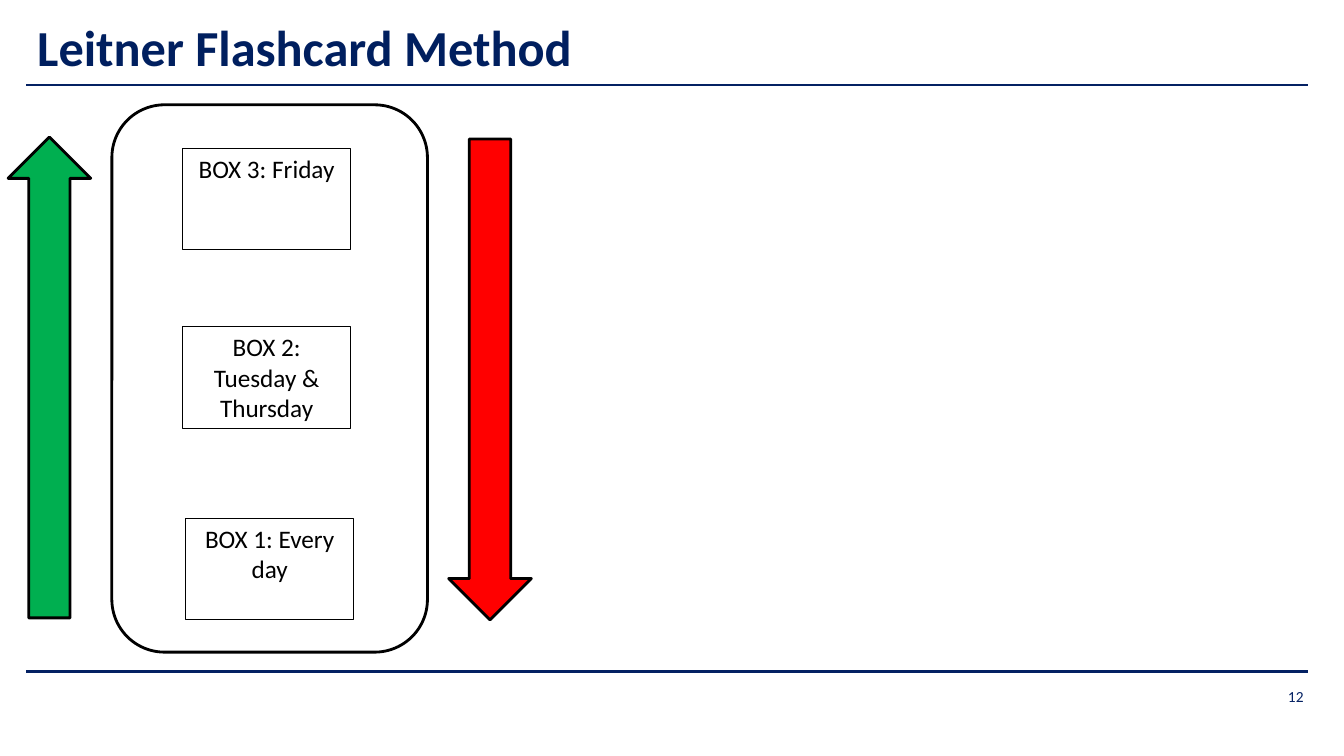
from lxml import etree
from pptx import Presentation, util as u
from pptx.dml.color import RGBColor
from pptx.enum import shapes as s, text as t
from pptx.oxml.ns import qn

NAVY, INK = "042163", "000000"


def color(code):
    return RGBColor.from_string(code)


def inches(*sizes):
    return [u.Inches(size) for size in sizes]


def write(shape, lines, look, align, inset=(0, 0)):
    frame = shape.text_frame
    side, top = inches(*inset)
    form = dict(word_wrap=True, margin_left=side, margin_right=side,
                margin_top=top, margin_bottom=0,
                vertical_anchor=t.MSO_ANCHOR.TOP)
    for key, value in form.items():
        setattr(frame, key, value)
    frame.text = "\n".join(lines)
    size, hue, bold = look
    for par in frame.paragraphs:
        par.alignment = align
        font = dict(name="Calibri", size=u.Pt(size), bold=bold)
        for key, value in font.items():
            setattr(par.font, key, value)
        par.font.color.rgb = color(hue)


def label(slide, box, words, look, align, inset=(0, 0)):
    shape = slide.shapes.add_textbox(*inches(*box))
    write(shape, [words], look, align, inset)


def rule(slide, left, top, width, weight):
    line = slide.shapes.add_connector(
        s.MSO_CONNECTOR.STRAIGHT, *inches(left, top, left + width, top))
    line.line.color.rgb = color(NAVY)
    line.line.width = u.Pt(weight)
    etree.SubElement(line._element.spPr, qn("a:effectLst"))


def block(slide, kind, box, weight, fill=None, bends=()):
    shape = slide.shapes.add_shape(kind, *inches(*box))
    shape.shadow.inherit = False
    for index, bend in enumerate(bends):
        shape.adjustments[index] = bend
    if fill:
        shape.fill.solid()
        shape.fill.fore_color.rgb = color(fill)
    else:
        shape.fill.background()
    shape.line.color.rgb = color(INK)
    shape.line.width = u.Pt(weight)
    return shape


def frame(slide, left, top, width, height):
    label(slide, (left + 0.1, 0.14, 6, 0.63), "Leitner Flashcard Method",
          (36, "001F5F", True), t.PP_ALIGN.LEFT, (0.01, 0.02))
    rule(slide, left, top, width, 1.5)
    rule(slide, left, top + height, width, 1.75)
    label(slide, (left + width - 0.24, 6.82, 0.2, 0.18), "12",
          (11, NAVY, False), t.PP_ALIGN.RIGHT)


def stack(slide, left, top, width, height):
    block(slide, s.MSO_SHAPE.ROUNDED_RECTANGLE,
          (left, top, width, height), 2, bends=[0.167])
    cards = [
        (0.7, 0.43, ["BOX 3: Friday"]),
        (0.7, 2.2, ["BOX 2:", "Tuesday &", "Thursday"]),
        (0.73, 4.1, ["BOX 1: Every day"]),
    ]
    for x, y, lines in cards:
        card = block(slide, s.MSO_SHAPE.RECTANGLE,
                     (left + x, top + y, 1.67, 1.01), 0.75)
        write(card, lines, (18, INK, False), t.PP_ALIGN.CENTER, (0.1, 0.05))


def arrows(slide, left, top, width, height):
    wide = 0.82
    pair = [(s.MSO_SHAPE.UP_ARROW, left, top, "00AF50"),
            (s.MSO_SHAPE.DOWN_ARROW, left + width - wide, top + 0.02, "FF0000")]
    for kind, x, y, fill in pair:
        block(slide, kind, (x, y, wide, height), 2, fill, [0.5, 0.5])


def main():
    deck = Presentation()
    deck.slide_width, deck.slide_height = inches(13.33, 7.5)
    slide = deck.slides.add_slide(deck.slide_layouts[6])
    frame(slide, 0.26, 0.84, 12.71, 5.82)
    stack(slide, 1.11, 1.04, 3.13, 5.43)
    arrows(slide, 0.08, 1.36, 5.19, 4.77)
    deck.save("out.pptx")


if __name__ == "__main__":
    main()
